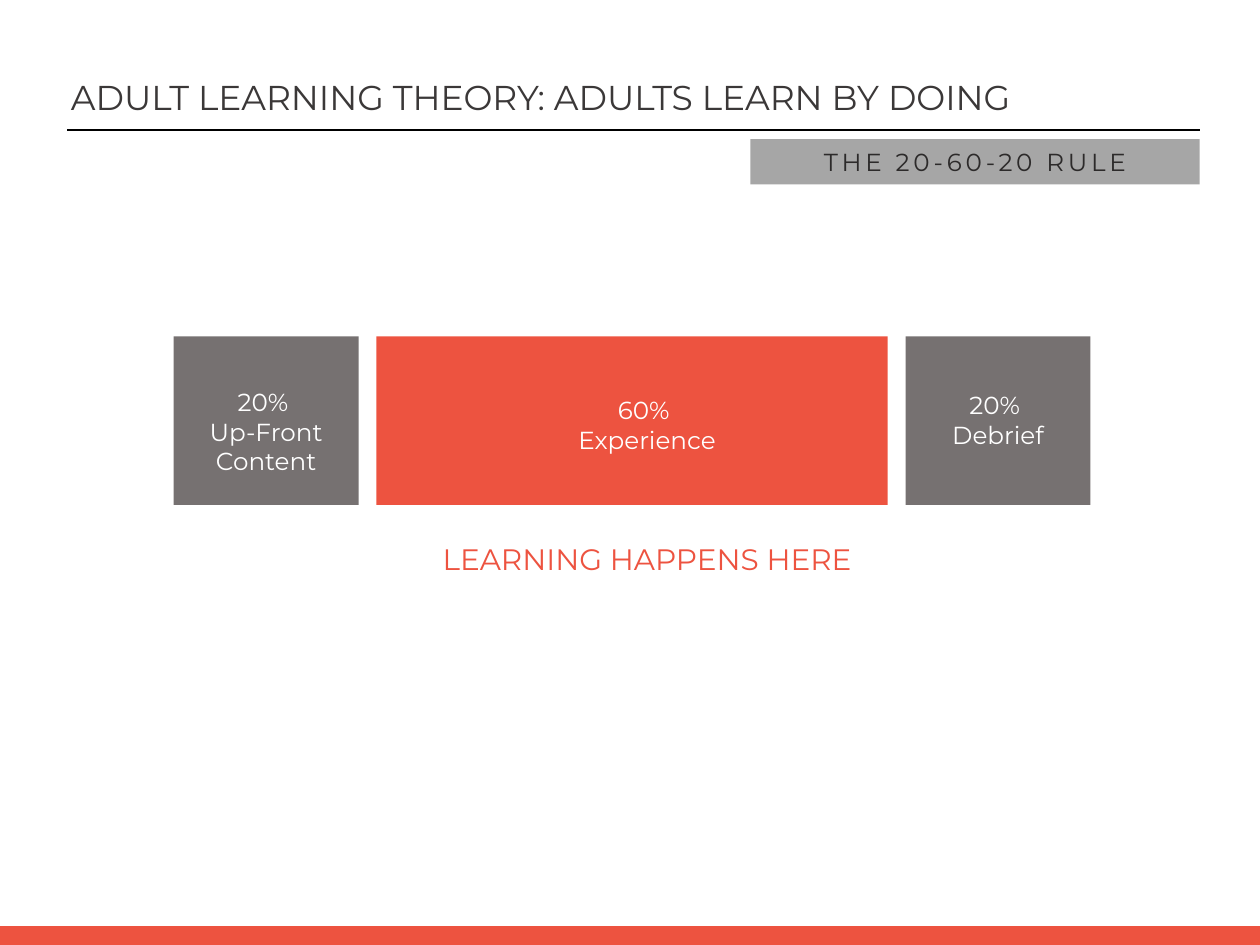
from lxml import etree
from pptx import Presentation
from pptx import util as u
from pptx.dml.color import RGBColor
from pptx.enum import shapes, text
from pptx.oxml import ns

FONT = "Montserrat"
COLOURS = {
    "accent": "ED5340",
    "block": "767171",
    "banner": "A6A6A6",
    "title": "3B3838",
    "banner_text": "2C2A2A",
    "white": "FFFFFF",
    "rule": "000000",
}
SLIDE_WIDTH, SLIDE_HEIGHT = 36.12, 27.1
CENTRE = text.PP_ALIGN.CENTER
LEFT = text.PP_ALIGN.LEFT
TOP = text.MSO_ANCHOR.TOP
MIDDLE = text.MSO_ANCHOR.MIDDLE


def colour(name):
    return RGBColor.from_string(COLOURS[name])


def cm_box(*lengths):
    return [u.Cm(length) for length in lengths]


def write(shape, lines, size, colour_name, align=CENTRE, anchor=TOP, spacing=0):
    frame = shape.text_frame
    frame.word_wrap = True
    frame.auto_size = text.MSO_AUTO_SIZE.NONE
    frame.vertical_anchor = anchor
    for index, line in enumerate(lines):
        paragraph = frame.add_paragraph() if index else frame.paragraphs[0]
        paragraph.alignment = align
        run = paragraph.add_run()
        run.text = line
        run.font.name = FONT
        run.font.size = u.Pt(size)
        run.font.color.rgb = colour(colour_name)
        if spacing:
            run._r.get_or_add_rPr().set("spc", str(spacing * 100))


def add_rectangle(slide, box, fill):
    shape = slide.shapes.add_shape(shapes.MSO_SHAPE.RECTANGLE, *cm_box(*box))
    shape.shadow.inherit = False
    shape.fill.solid()
    shape.fill.fore_color.rgb = colour(fill)
    shape.line.fill.background()
    return shape


def add_text(slide, box, lines, size, colour_name, **options):
    write(slide.shapes.add_textbox(*cm_box(*box)), lines, size, colour_name, **options)


def add_header(slide, left, top, width):
    title = slide.shapes.title
    title.left, title.top, title.width, title.height = cm_box(left - 0.15, top, width + 0.2, 1.45)
    write(title, ["ADULT LEARNING THEORY: ADULTS LEARN BY DOING"], 28, "title", align=LEFT)

    rule_top = top + 1.67
    rule = slide.shapes.add_connector(
        shapes.MSO_CONNECTOR.STRAIGHT, *cm_box(left, rule_top, left + width, rule_top))
    rule.line.color.rgb = colour("rule")
    rule.line.width = u.Pt(1)
    etree.SubElement(rule._element.spPr, ns.qn("a:effectLst"))

    banner_width = 12.88
    banner = add_rectangle(
        slide, (left + width - banner_width, rule_top + 0.26, banner_width, 1.3), "banner")
    write(banner, ["THE 20-60-20 RULE"], 20, "banner_text", anchor=MIDDLE, spacing=3)


def add_learning_bar(slide, left, top, height):
    gap = 0.51
    blocks = [
        (5.3, "block", ["20% ", "Up-Front Content"], 0, 1.32),
        (14.66, "accent", ["60% ", "Experience"], 0.43, 1.55),
        (5.3, "block", ["20% ", "Debrief"], 0, 1.42),
    ]
    for width, fill, lines, shift, drop in blocks:
        add_rectangle(slide, (left, top, width, height), fill)
        add_text(slide, (left + shift, top + drop, width, height - drop), lines, 20, "white")
        if fill == "accent":
            add_text(slide, (left + shift, top + height + 0.91, width, 1.28),
                     ["LEARNING HAPPENS HERE"], 24, "accent", anchor=MIDDLE)
        left += width + gap


def add_footer(slide, height):
    add_rectangle(slide, (0, SLIDE_HEIGHT - height, SLIDE_WIDTH, height), "accent")


def main():
    presentation = Presentation()
    presentation.slide_width, presentation.slide_height = cm_box(SLIDE_WIDTH, SLIDE_HEIGHT)
    slide = presentation.slides.add_slide(presentation.slide_layouts.get_by_name("Title Only"))
    add_footer(slide, 0.54)
    add_learning_bar(slide, left=4.98, top=9.65, height=4.83)
    add_header(slide, left=1.93, top=2.06, width=32.46)
    presentation.save("out.pptx")


if __name__ == "__main__":
    main()
